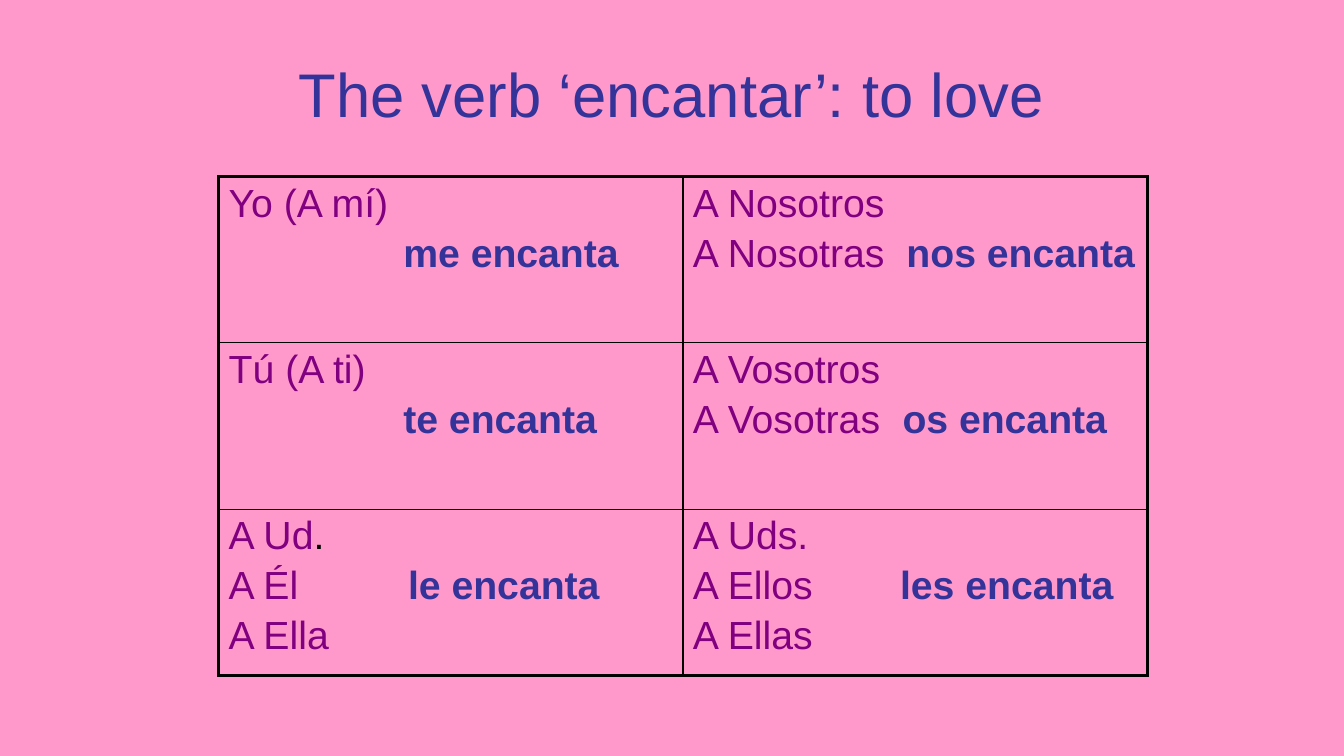
import pptx
import pptx.dml.color
import pptx.enum.text
import pptx.oxml
import pptx.oxml.ns
import pptx.util
from pptx.util import Cm, Pt

COLORS = {"back": "FF99CC", "verb": "333399", "person": "800080", "line": "000000"}
FONT = "Arial"
THICK, THIN = 2.25, 1

CELLS = [
    [
        (4.4, [[("Yo (A mí)", "person")], [("\t", "person"), ("me encanta", "verb")]]),
        (5.38, [[("A Nosotros", "person")], [("A Nosotras\t", "person"), ("nos encanta", "verb")]]),
    ],
    [
        (4.4, [[("Tú (A ti)", "person")], [("\t", "person"), ("te encanta", "verb")]]),
        (5.28, [[("A Vosotros", "person")], [("A Vosotras\t", "person"), ("os encanta", "verb")]]),
    ],
    [
        (4.52, [[("A Ud", "person"), (".", "line")],
                [("A Él\t", "person"), ("le encanta", "verb")],
                [("A Ella", "person")]]),
        (5.22, [[("A Uds.", "person")],
                [("A Ellos\t", "person"), ("les encanta", "verb")],
                [("A Ellas", "person")]]),
    ],
]


def rgb(name):
    return pptx.dml.color.RGBColor.from_string(COLORS[name])


def add_title(s, text):
    sp = s.shapes.title
    sp.left, sp.top, sp.width, sp.height = Cm(1.69), Cm(0.76), Cm(30.48), Cm(3.18)
    tf = sp.text_frame
    tf.text = text
    tf.vertical_anchor = pptx.enum.text.MSO_ANCHOR.MIDDLE
    p = tf.paragraphs[0]
    p.alignment = pptx.enum.text.PP_ALIGN.CENTER
    p.font.name, p.font.size = FONT, Pt(44)
    p.font.color.rgb = rgb("verb")


def add_tab_stop(p, position):
    ns = pptx.oxml.ns.nsdecls("a")
    p._p.get_or_add_pPr().append(pptx.oxml.parse_xml(
        f'<a:tabLst {ns}><a:tab pos="{Cm(position)}" algn="l"/></a:tabLst>'))


def set_borders(cell, widths):
    ns = pptx.oxml.ns.nsdecls("a")
    tc_pr = cell._tc.get_or_add_tcPr()
    for i, (side, width) in enumerate(widths.items()):
        tc_pr.insert(i, pptx.oxml.parse_xml(
            f'<a:ln{side} {ns} w="{Pt(width)}"><a:solidFill>'
            f'<a:srgbClr val="{COLORS["line"]}"/></a:solidFill></a:ln{side}>'))


def fill_cell(cell, tab, lines):
    cell.fill.background()
    tf = cell.text_frame
    for i, line in enumerate(lines):
        p = tf.add_paragraph() if i else tf.paragraphs[0]
        if i:
            p.space_before = Pt(4.6)
        if any("\t" in text for text, _ in line):
            add_tab_stop(p, tab)
        p.font.name, p.font.size = FONT, Pt(28)
        for text, color in line:
            r = p.add_run()
            r.text = text
            r.font.color.rgb = rgb(color)
            r.font.bold = color == "verb"


def add_verb_table(s):
    rows, cols = len(CELLS), len(CELLS[0])
    table = s.shapes.add_table(
        rows, cols, Cm(5.51), Cm(4.45), Cm(11.7 * cols), Cm(4.19 * rows)).table
    table.first_row = table.horz_banding = False
    for i, row in enumerate(CELLS):
        for j, (tab, lines) in enumerate(row):
            cell = table.cell(i, j)
            fill_cell(cell, tab, lines)
            set_borders(cell, {
                "L": THICK if j == 0 else THIN,
                "R": THICK if j == cols - 1 else THIN,
                "T": THICK if i == 0 else THIN,
                "B": THICK if i == rows - 1 else THIN,
            })


def main():
    prs = pptx.Presentation()
    prs.slide_width, prs.slide_height = Cm(33.87), Cm(19.05)
    s = prs.slides.add_slide(prs.slide_layouts[5])
    s.background.fill.solid()
    s.background.fill.fore_color.rgb = rgb("back")
    add_title(s, "The verb ‘encantar’: to love")
    add_verb_table(s)
    prs.save("out.pptx")


if __name__ == "__main__":
    main()
